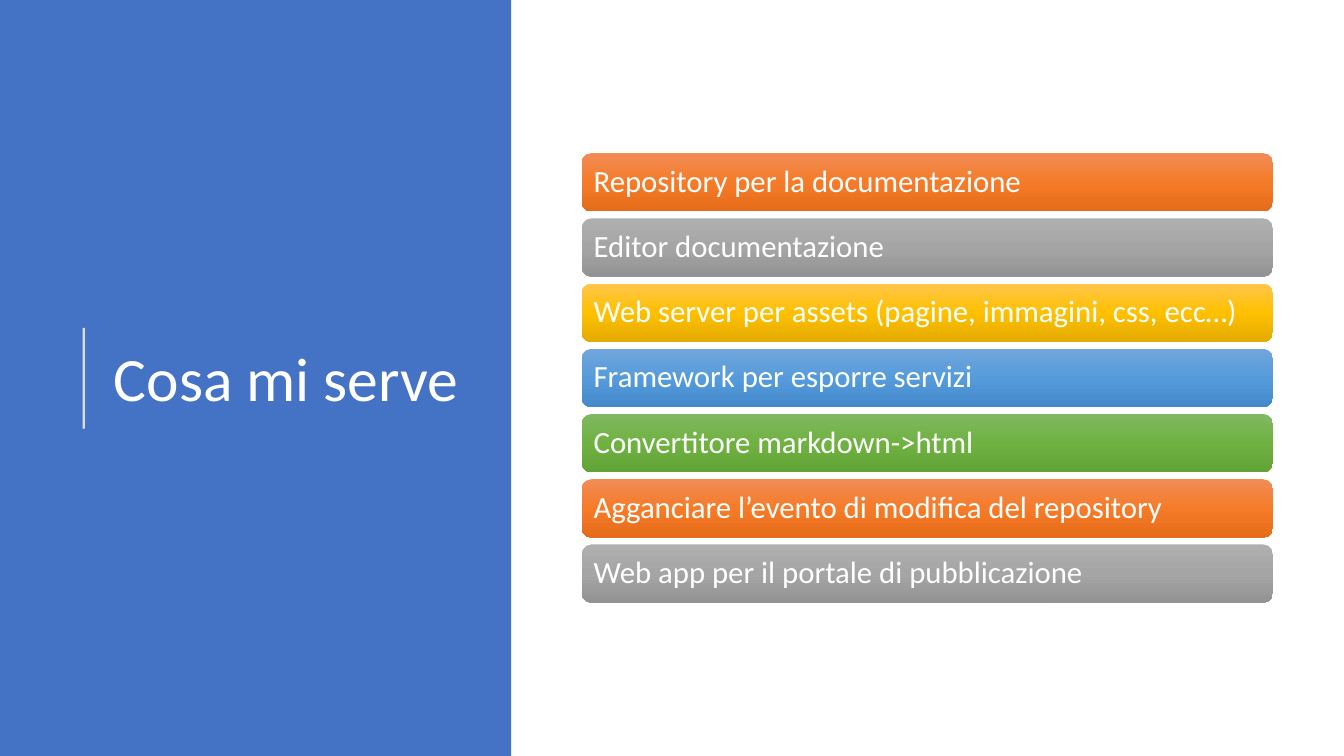
from lxml import etree
from pptx import Presentation
from pptx.dml.color import RGBColor
from pptx.enum import shapes, text
from pptx.oxml import ns
from pptx.util import Cm, Pt

FONT = "Calibri"
COLOURS = {"panel": "4472C4", "white": "FFFFFF"}
GRADIENTS = {
    "orange": ("F18C57", "F67B28", "E56C19"),
    "grey": ("AFAFAF", "A5A5A5", "939393"),
    "gold": ("FFC64B", "FFC000", "E3AB00"),
    "blue": ("71A6DB", "559BDB", "448ACA"),
    "green": ("81B861", "6FB242", "62A336"),
}
NEEDS = [
    "Repository per la documentazione",
    "Editor documentazione",
    "Web server per assets (pagine, immagini, css, ecc…)",
    "Framework per esporre servizi",
    "Convertitore markdown->html",
    "Agganciare l’evento di modifica del repository",
    "Web app per il portale di pubblicazione",
]
FIRST_TOP, LAST_TOP = 3.86, 13.72


def colour(name):
    return RGBColor.from_string(COLOURS[name])


def write(shape, words, size, inset=0.25):
    """Put one left-aligned, vertically centred white paragraph in a shape."""
    frame = shape.text_frame
    frame.word_wrap = True
    frame.vertical_anchor = text.MSO_ANCHOR.MIDDLE
    frame.margin_left = frame.margin_right = Cm(inset)
    frame.margin_top = frame.margin_bottom = Cm(inset)
    para = frame.paragraphs[0]
    para.alignment = text.PP_ALIGN.LEFT
    para.line_spacing = 0.9
    span = para.add_run()
    span.text = words
    span.font.name = FONT
    span.font.size = Pt(size)
    span.font.color.rgb = colour("white")


def add_block(slide, kind, left, top, width, height):
    """Add a preset shape with neither outline nor shadow."""
    block = slide.shapes.add_shape(kind, Cm(left), Cm(top), Cm(width), Cm(height))
    block.shadow.inherit = False
    block.line.fill.background()
    return block


def fill_gradient(shape, stops):
    """Fill a shape from top to bottom with evenly spaced colours."""
    shape.fill.gradient()
    shape.fill.gradient_angle = 270
    stop_list = shape._element.spPr.find(".//" + ns.qn("a:gsLst"))
    for old_stop in list(stop_list):
        stop_list.remove(old_stop)
    for index, value in enumerate(stops):
        position = index * 100000 // (len(stops) - 1)
        stop = etree.SubElement(stop_list, ns.qn("a:gs"), pos=str(position))
        etree.SubElement(stop, ns.qn("a:srgbClr"), val=value)


def add_rule(slide, x, top, bottom):
    """Add a thin, slightly transparent vertical line."""
    rule = slide.shapes.add_connector(
        shapes.MSO_CONNECTOR.STRAIGHT, Cm(x), Cm(bottom), Cm(x), Cm(top))
    rule.line.width = Pt(1.5)
    rule.line.color.rgb = colour("white")
    properties = rule._element.spPr
    tone = properties.find(".//" + ns.qn("a:srgbClr"))
    etree.SubElement(tone, ns.qn("a:alpha"), val="80000")
    etree.SubElement(properties, ns.qn("a:effectLst"))


def add_title(slide, words):
    box = slide.shapes.add_textbox(Cm(2.62), Cm(1.98), Cm(9.37), Cm(15.29))
    write(box, words, size=44)


def add_bars(slide, labels):
    """Stack one bar per label, cycling through the gradients."""
    pitch = (LAST_TOP - FIRST_TOP) / (len(labels) - 1)
    gradients = list(GRADIENTS.values())
    for index, label in enumerate(labels):
        bar = add_block(slide, shapes.MSO_SHAPE.ROUNDED_RECTANGLE,
                        14.66, FIRST_TOP + index * pitch, 17.42, 1.47)
        fill_gradient(bar, gradients[index % len(gradients)])
        write(bar, label, size=22, inset=0.23)


def main():
    deck = Presentation()
    deck.slide_width, deck.slide_height = Cm(33.87), Cm(19.05)
    slide = deck.slides.add_slide(deck.slide_layouts[6])
    panel = add_block(slide, shapes.MSO_SHAPE.RECTANGLE, 0, 0, 12.88, 19.05)
    panel.fill.solid()
    panel.fill.fore_color.rgb = colour("panel")
    add_title(slide, "Cosa mi serve")
    add_rule(slide, x=2.11, top=8.26, bottom=10.8)
    add_bars(slide, NEEDS)
    deck.save("out.pptx")


if __name__ == "__main__":
    main()
